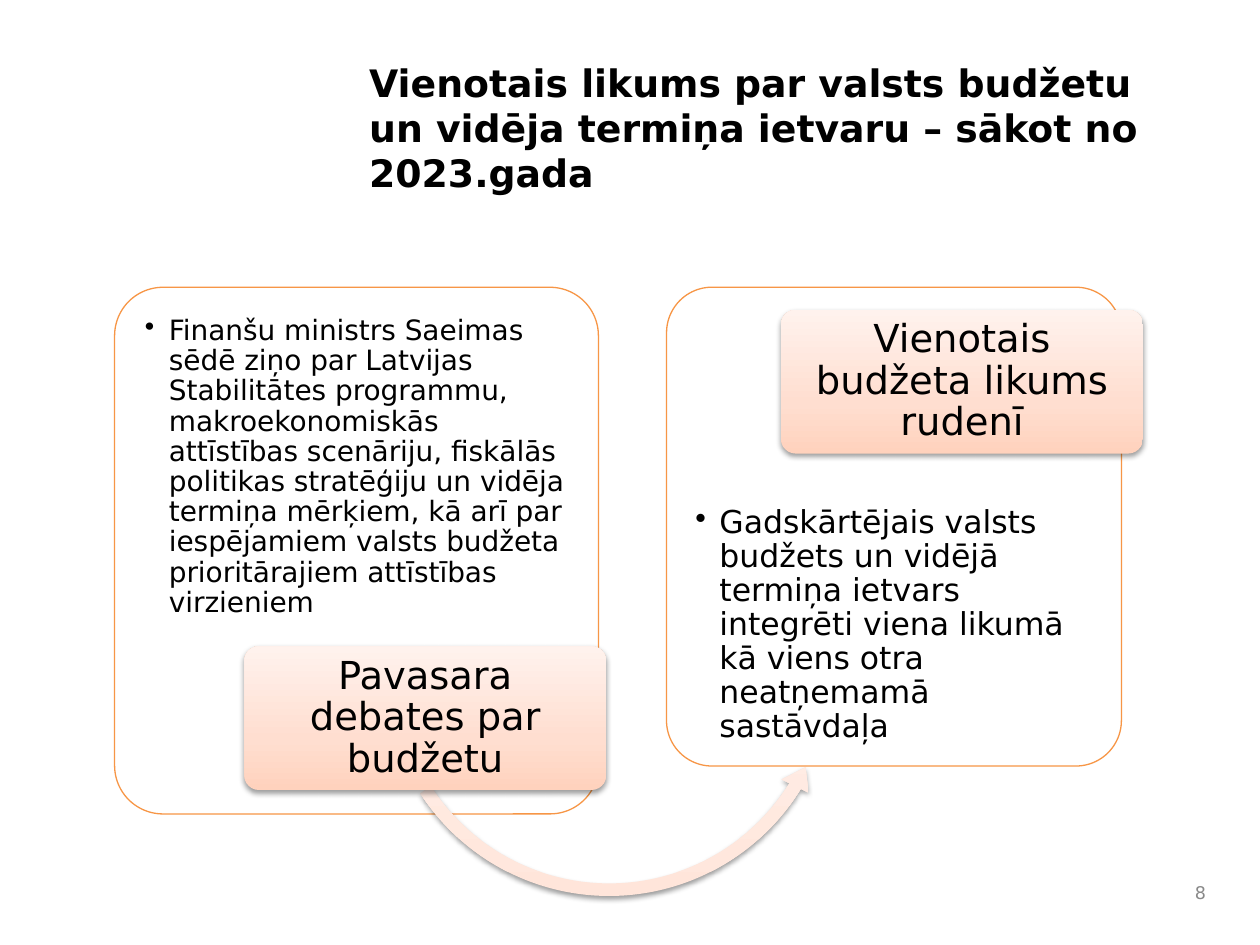
from lxml.etree import SubElement as Sub
from pptx import Presentation
from pptx.dml.color import RGBColor
from pptx.enum.shapes import MSO_SHAPE as Kind
from pptx.enum.text import MSO_ANCHOR as Anchor, PP_ALIGN as Align
from pptx.oxml.ns import qn
from pptx.util import Inches, Pt

FONT = "DejaVu Sans"
PEACH = ((0, "FFD2BD"), (35, "FFDED0"), (100, "FFF2ED"))
PALE = ((0, "FFE5DA"), (35, "FFECE4"), (100, "FFF8F5"))


def color(code):
    """Turn a hex string into a colour."""
    return RGBColor.from_string(code)


def tag(node, name, **attrs):
    """Append a drawing element with the given attributes."""
    return Sub(node, qn("a:" + name), {k: str(v) for k, v in attrs.items()})


def place(shape, box):
    """Move a shape to a box given in inches."""
    shape.left, shape.top, shape.width, shape.height = map(Inches, box)


def write(shape, text, size=16, ink="000000", bold=False, align=Align.LEFT,
          anchor=Anchor.TOP, pad=(0.1, 0.05, 0.1, 0.05), lead=None, hang=0):
    """Fill a shape with one formatted paragraph; hang adds a bullet."""
    frame = shape.text_frame
    frame.word_wrap = True
    frame.vertical_anchor = anchor
    (frame.margin_left, frame.margin_top,
     frame.margin_right, frame.margin_bottom) = map(Inches, pad)
    para = frame.paragraphs[0]
    para.alignment = align
    if lead:
        para.line_spacing = lead
    if hang:
        props = para._p.get_or_add_pPr()
        props.set("marL", str(Inches(hang)))
        props.set("indent", str(-Inches(hang)))
        tag(props, "buChar", char="•")
    run = para.add_run()
    run.text = text
    font = run.font
    font.name, font.size, font.bold = FONT, Pt(size), bold
    font.color.rgb = color(ink)


def label(slide, box, text, **style):
    """Add a text box."""
    shape = slide.shapes.add_textbox(*map(Inches, box))
    write(shape, text, **style)


def shade(shape, stops):
    """Give a shape an upward gradient and a soft shadow below."""
    shape.line.fill.background()
    shape.fill.gradient()
    shape.fill.gradient_angle = 90
    props = shape._element.spPr
    ramp = props.find(qn("a:gradFill")).find(qn("a:gsLst"))
    for old in list(ramp):
        ramp.remove(old)
    for pos, code in stops:
        tag(tag(ramp, "gs", pos=pos * 1000), "srgbClr", val=code)
    cast = tag(tag(props, "effectLst"), "outerShdw", blurRad=Pt(3.1),
               dist=Pt(1.6), dir=5400000, rotWithShape=0)
    tag(tag(cast, "srgbClr", val="000000"), "alpha", val=38000)


def panel(slide, box):
    """Add an outlined, nearly opaque white panel."""
    shape = slide.shapes.add_shape(Kind.ROUNDED_RECTANGLE, *map(Inches, box))
    shape.adjustments[0] = 0.1
    shape.shadow.inherit = False
    shape.fill.solid()
    shape.fill.fore_color.rgb = color("FFFFFF")
    paint = shape._element.spPr.find(qn("a:solidFill"))
    tag(paint[0], "alpha", val=90000)
    shape.line.color.rgb = color("F79646")
    shape.line.width = Pt(0.75)


def badge(slide, left, top, text):
    """Add a shaded heading badge."""
    box = (left, top, 2.87, 1.14)
    shape = slide.shapes.add_shape(Kind.ROUNDED_RECTANGLE, *map(Inches, box))
    shape.adjustments[0] = 0.1
    shade(shape, PEACH)
    write(shape, text, size=22, align=Align.CENTER, anchor=Anchor.MIDDLE,
          pad=(0.08, 0.06, 0.08, 0.06), lead=0.9)


def arrow(slide, box):
    """Add the curved arrow that sweeps under both panels."""
    shape = slide.shapes.add_shape(Kind.LEFT_CIRCULAR_ARROW,
                                   *map(Inches, box))
    for i, value in enumerate((0.027, 3.348, 19.054, 88.196, 0.032)):
        shape.adjustments[i] = value
    shade(shape, PALE)


def spring(slide, left, top):
    """Build the spring debate panel with its arrow and badge."""
    panel(slide, (left, top, 3.84, 4.18))
    label(slide, (left + 0.1, top + 0.09, 3.65, 3.09),
          "Finanšu ministrs Saeimas sēdē ziņo par Latvijas Stabilitātes "
          "programmu, makroekonomiskās attīstības scenāriju, fiskālās "
          "politikas stratēģiju un vidēja termiņa mērķiem, kā arī par "
          "iespējamiem valsts budžeta prioritārajiem attīstības virzieniem",
          pad=(0.14,) * 4, lead=0.9, hang=0.19)
    arrow(slide, (left + 2.07, top + 1.19, 3.71, 3.71))
    badge(slide, left + 1.03, top + 2.85, "Pavasara debates par budžetu")


def autumn(slide, left, top):
    """Build the autumn law panel with its badge."""
    panel(slide, (left, top, 3.61, 3.8))
    label(slide, (left + 0.09, top + 0.9, 3.44, 2.81),
          "Gadskārtējais valsts budžets un vidējā termiņa ietvars integrēti "
          "viena likumā kā viens otra neatņemamā sastāvdaļa",
          size=18, anchor=Anchor.BOTTOM, pad=(0.14, 0.14, 0.14, 0.08),
          lead=0.9, hang=0.19)
    badge(slide, left + 0.91, top + 0.18, "Vienotais budžeta likums rudenī")


def main():
    """Build and save the slide."""
    deck = Presentation()
    deck.slide_width, deck.slide_height = Inches(10), Inches(7.5)
    slide = deck.slides.add_slide(deck.slide_layouts[5])
    title = slide.shapes.title
    place(title, (2.83, 0.42, 6.67, 1.13))
    write(title, "Vienotais likums par valsts budžetu un vidēja termiņa "
          "ietvaru – sākot no 2023.gada", size=21.6, bold=True)
    spring(slide, 0.91, 2.28)
    autumn(slide, 5.29, 2.28)
    label(slide, (9.21, 6.92, 0.46, 0.33), "8", size=10, ink="898989",
          align=Align.RIGHT, anchor=Anchor.MIDDLE)
    deck.save("out.pptx")


if __name__ == "__main__":
    main()
